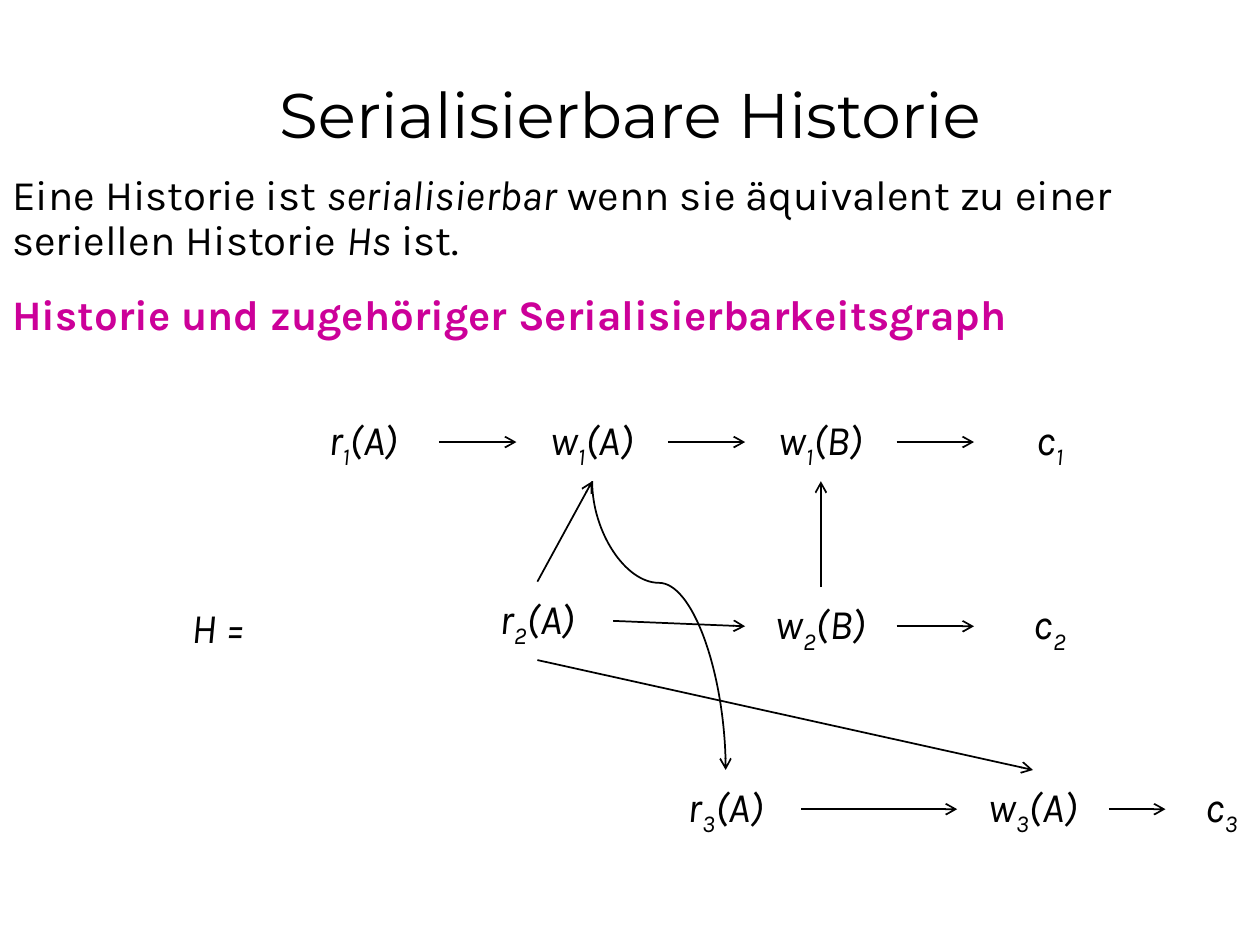
import pptx
import pptx.util
import pptx.dml.color
import pptx.enum.shapes
import pptx.enum.text
import pptx.oxml.ns
import pptx.oxml.xmlchemy

Pt = pptx.util.Pt
ALIGN = pptx.enum.text.PP_ALIGN
ANCHOR = pptx.enum.text.MSO_ANCHOR
CONNECTOR = pptx.enum.shapes.MSO_CONNECTOR
qn = pptx.oxml.ns.qn
new_element = pptx.oxml.xmlchemy.OxmlElement

# Content: a run is (text, style), with i italic, b bold, s subscript
COLORS = {"text": "000000", "accent": "CC0099"}
TITLE = [("Serialisierbare Historie", "")]
DEFINITION = [
    ("Eine Historie ist ", ""), ("serialisierbar", "i"),
    (" wenn sie äquivalent zu einer seriellen Historie ", ""),
    ("Hs", "i"), (" ist.", ""),
]
HEADING = [("Historie und zugehöriger Serialisierbarkeitsgraph", "b")]

NODE_W, NODE_H = 86.6, 44.8
ROW_1, ROW_2, ROW_3 = 230.2, 335.5, 440
COL_W1, COL_B, COL_C = 295.1, 425.8, 556.6

# Operation: (action, transaction, object, left, top)
OPERATIONS = {
    "r1": ("r", "1", "(A)", 164.2, ROW_1),
    "w1A": ("w", "1", "(A)", COL_W1, ROW_1),
    "w1B": ("w", "1", "(B)", COL_B, ROW_1),
    "c1": ("c", "1", "", COL_C, ROW_1),
    "r2": ("r", "2", "(A)", 263.8, 332.4),
    "w2": ("w", "2", "(B)", COL_B, ROW_2),
    "c2": ("c", "2", "", COL_C, ROW_2),
    "r3": ("r", "3", "(A)", 371.4, ROW_3),
    "w3": ("w", "3", "(A)", 547, ROW_3),
    "c3": ("c", "3", "", 666, ROW_3),
}
NODE_WIDTHS = {"c3": 64}

TOP, LEFT, BOTTOM, RIGHT = range(4)
SEQUENCES = [("r1", "w1A", "w1B", "c1"), ("r2", "w2", "c2"), ("r3", "w3", "c3")]
CONFLICTS = [
    ("r2", TOP, "w1A", BOTTOM),
    ("w2", TOP, "w1B", BOTTOM),
    ("r2", BOTTOM, "w3", TOP),
]
CURVE_BEND = 35200

presentation = pptx.Presentation()
presentation.slide_width, presentation.slide_height = Pt(720), Pt(540)
slide = presentation.slides.add_slide(presentation.slide_layouts[6])


def add_text(paragraphs, left, top, width, height, size=24, font="Karla",
             colors=("text",), align=ALIGN.CENTER, anchor=ANCHOR.MIDDLE,
             line_spacing=None, before=0, after=0):
    box = slide.shapes.add_textbox(Pt(left), Pt(top), Pt(width), Pt(height))
    frame = box.text_frame
    frame.word_wrap = True
    frame.vertical_anchor = anchor
    for index, (runs, color) in enumerate(zip(paragraphs, colors)):
        paragraph = frame.add_paragraph() if index else frame.paragraphs[0]
        paragraph.alignment = align
        paragraph.line_spacing = line_spacing
        paragraph.space_before = Pt(before if index else 0)
        paragraph.space_after = Pt(after)
        for text, style in runs:
            run = paragraph.add_run()
            run.text = text
            run.font.name, run.font.size = font, Pt(size)
            run.font.italic, run.font.bold = "i" in style, "b" in style
            run.font.color.rgb = pptx.dml.color.RGBColor.from_string(COLORS[color])
            if "s" in style:
                run._r.get_or_add_rPr().set("baseline", "-25000")
    return box


def add_arrow(kind, x1=0, y1=0, x2=0, y2=0):
    arrow = slide.shapes.add_connector(kind, Pt(x1), Pt(y1), Pt(x2), Pt(y2))
    arrow.line.color.rgb = pptx.dml.color.RGBColor.from_string(COLORS["text"])
    arrow.line.width = Pt(1)
    tail = new_element("a:tailEnd")
    tail.set("type", "arrow")
    arrow.line._get_or_add_ln().append(tail)
    arrow._element.spPr.append(new_element("a:effectLst"))
    return arrow


def join(source, source_side, target, target_side):
    arrow = add_arrow(CONNECTOR.STRAIGHT)
    arrow.begin_connect(nodes[source], source_side)
    arrow.end_connect(nodes[target], target_side)


# Title and definition
add_text([TITLE], 0, 0, 720, 90, size=36, font="Montserrat", anchor=ANCHOR.BOTTOM)
add_text([DEFINITION, HEADING], 0, 96, 720, 117, colors=("text", "accent"),
         align=ALIGN.LEFT, anchor=ANCHOR.TOP, line_spacing=0.9, before=4.8, after=12)

# Operations of the history
add_text([[("H =", "i")]], 82, ROW_2, NODE_W, NODE_H)
nodes = {}
for key, (action, transaction, data, left, top) in OPERATIONS.items():
    label = [(action, "i"), (transaction, "is")] + ([(data, "i")] if data else [])
    nodes[key] = add_text([label], left, top, NODE_WIDTHS.get(key, NODE_W), NODE_H)

# Order within each transaction, then conflicts between transactions
for sequence in SEQUENCES:
    for source, target in zip(sequence, sequence[1:]):
        join(source, RIGHT, target, LEFT)
for conflict in CONFLICTS:
    join(*conflict)

# Curved conflict from w1(A) down to r3(A): a flipped curve turned by 270 degrees
start_x, start_y = COL_W1 + NODE_W / 2, ROW_1 + NODE_H
end_x, end_y = OPERATIONS["r3"][3] + NODE_W / 2, ROW_3
mid_x, mid_y = (start_x + end_x) / 2, (start_y + end_y) / 2
half_drop, half_shift = (end_y - start_y) / 2, (end_x - start_x) / 2
curve = add_arrow(CONNECTOR.CURVE, mid_x + half_drop, mid_y - half_shift,
                  mid_x - half_drop, mid_y + half_shift)
curve._element.spPr.find(qn("a:xfrm")).set("rot", "16200000")
geometry = curve._element.spPr.find(qn("a:prstGeom"))
bend = new_element("a:gd")
bend.set("name", "adj1")
bend.set("fmla", f"val {CURVE_BEND}")
geometry.find(qn("a:avLst")).append(bend)

presentation.save("out.pptx")
